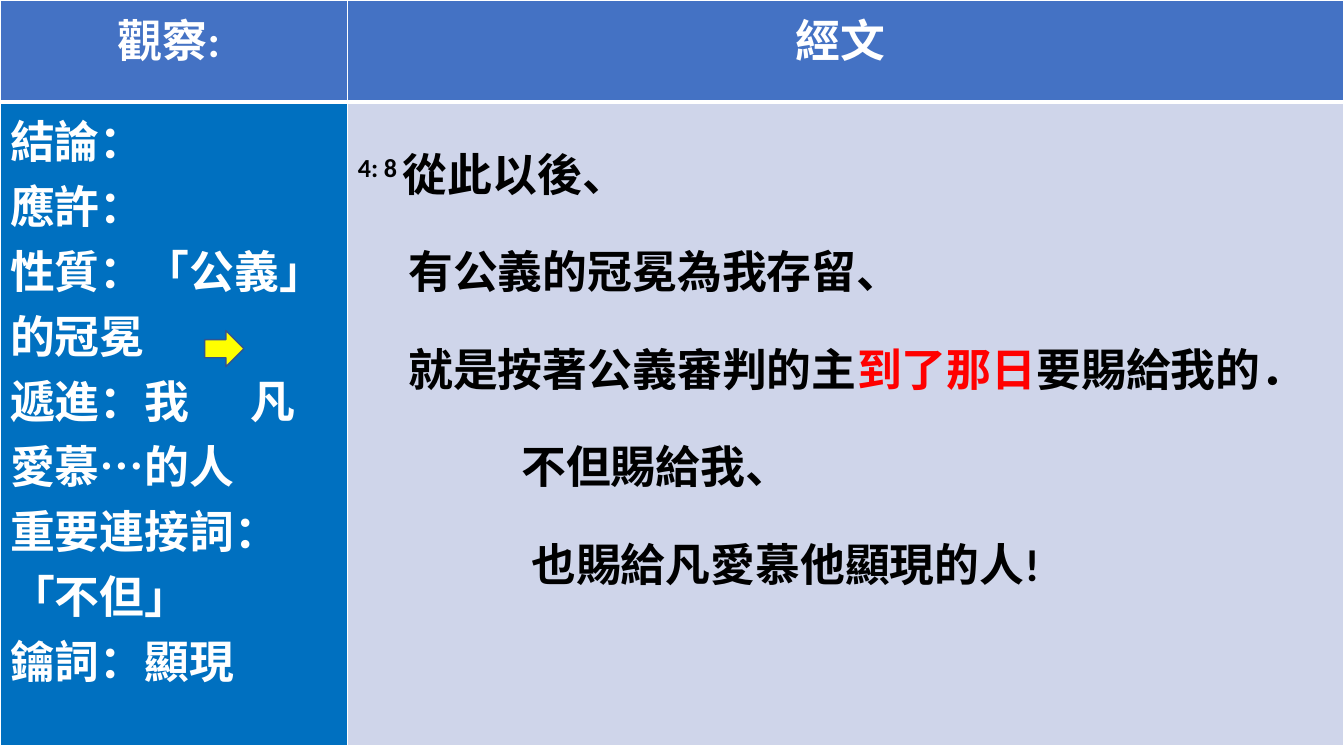
from lxml.etree import SubElement as Sub
from pptx import Presentation
from pptx.dml.color import RGBColor
from pptx.enum.shapes import MSO_SHAPE as Shape
from pptx.enum.text import PP_ALIGN as Align
from pptx.oxml.ns import qn
from pptx.util import Inches, Pt

WHITE = RGBColor(0xFF, 0xFF, 0xFF)
BLACK = RGBColor(0, 0, 0)
RED = RGBColor(0xFF, 0, 0)
YELLOW = RGBColor(0xFF, 0xFF, 0)
HEAD = RGBColor(0x44, 0x72, 0xC4)
SIDE = RGBColor(0x00, 0x70, 0xC0)
PALE = RGBColor(0xCF, 0xD5, 0xEA)
EDGE = RGBColor(0x32, 0x54, 0x91)

HEADERS = ["觀察: ", "經文 "]
NOTES = [
    "結論：",
    "應許：",
    "性質：「公義」的冠冕",
    "遞進：我\t凡愛慕…的人",
    "重要連接詞：「不但」",
    "鑰詞：顯現",
]
# Each verse line: left indent in inches, then its runs as (text, format).
VERSE = [
    (0, [("4: 8 ", {"raised": True}), ("從此以後、", {})]),
    (0.5, [("有公義的冠冕為我存留、", {})]),
    (0.5, [("就是按著公義審判的主", {}), ("到了那日", {"color": RED}),
           ("要賜給我的．", {})]),
    (1.62, [("不但賜給我、", {})]),
    (1.72, [("也賜給凡愛慕他顯現的人!", {})]),
]


def add_text(para, text, color=BLACK, size=32, raised=False):
    run = para.add_run()
    run.text = text
    font = run.font
    font.name, font.size, font.bold = "Calibri", Pt(size), True
    font.color.rgb = color
    if raised:
        font._element.set("baseline", "30000")


def next_para(frame, index):
    return frame.add_paragraph() if index else frame.paragraphs[0]


def set_indent(para, inches):
    props = para._p.get_or_add_pPr()
    props.set("marL", str(Inches(inches)))
    props.set("indent", "0")


def set_tab(para, inches):
    tabs = Sub(para._p.get_or_add_pPr(), qn("a:tabLst"))
    Sub(tabs, qn("a:tab"), pos=str(Inches(inches)), algn="l")


def style_cell(cell, fill, top=1, bottom=1):
    """Give the cell white edges, with widths in points, and a fill."""
    props = cell._tc.get_or_add_tcPr()
    for side, width in zip("LRTB", (1, 1, top, bottom)):
        line = Sub(props, qn(f"a:ln{side}"), w=str(Pt(width)))
        Sub(Sub(line, qn("a:solidFill")), qn("a:srgbClr"), val=str(WHITE))
    cell.fill.solid()
    cell.fill.fore_color.rgb = fill


def fill_header(table):
    for col, title in enumerate(HEADERS):
        cell = table.cell(0, col)
        style_cell(cell, HEAD, bottom=3)
        para = cell.text_frame.paragraphs[0]
        para.alignment = Align.CENTER
        add_text(para, title, color=WHITE)


def fill_notes(cell):
    style_cell(cell, SIDE, top=3)
    for index, note in enumerate(NOTES):
        para = next_para(cell.text_frame, index)
        if "\t" in note:
            set_tab(para, 2.38)
        add_text(para, note, color=WHITE)


def fill_verse(cell):
    style_cell(cell, PALE, top=3)
    for index, (indent, runs) in enumerate(VERSE):
        para = next_para(cell.text_frame, index)
        para.line_spacing = 1.5
        set_indent(para, indent)
        for text, form in runs:
            add_text(para, text, **form)


def add_grid(slide):
    table = slide.shapes.add_table(
        2, 2, 0, 0, Inches(13.33), Inches(7.4)).table
    for col, width in zip(table.columns, (3.45, 9.88)):
        col.width = Inches(width)
    for row, height in zip(table.rows, (1.01, 6.39)):
        row.height = Inches(height)
    return table


def add_arrow(slide, left, top, width, height):
    arrow = slide.shapes.add_shape(
        Shape.RIGHT_ARROW, *map(Inches, (left, top, width, height)))
    arrow.shadow.inherit = False
    arrow.fill.solid()
    arrow.fill.fore_color.rgb = YELLOW
    arrow.line.color.rgb = EDGE
    arrow.line.width = Pt(1)


def main():
    deck = Presentation()
    deck.slide_width, deck.slide_height = Inches(13.33), Inches(7.5)
    slide = deck.slides.add_slide(deck.slide_layouts[6])
    table = add_grid(slide)
    fill_header(table)
    fill_notes(table.cell(1, 0))
    fill_verse(table.cell(1, 1))
    add_arrow(slide, 2.03, 3.28, 0.39, 0.36)
    deck.save("out.pptx")


if __name__ == "__main__":
    main()
